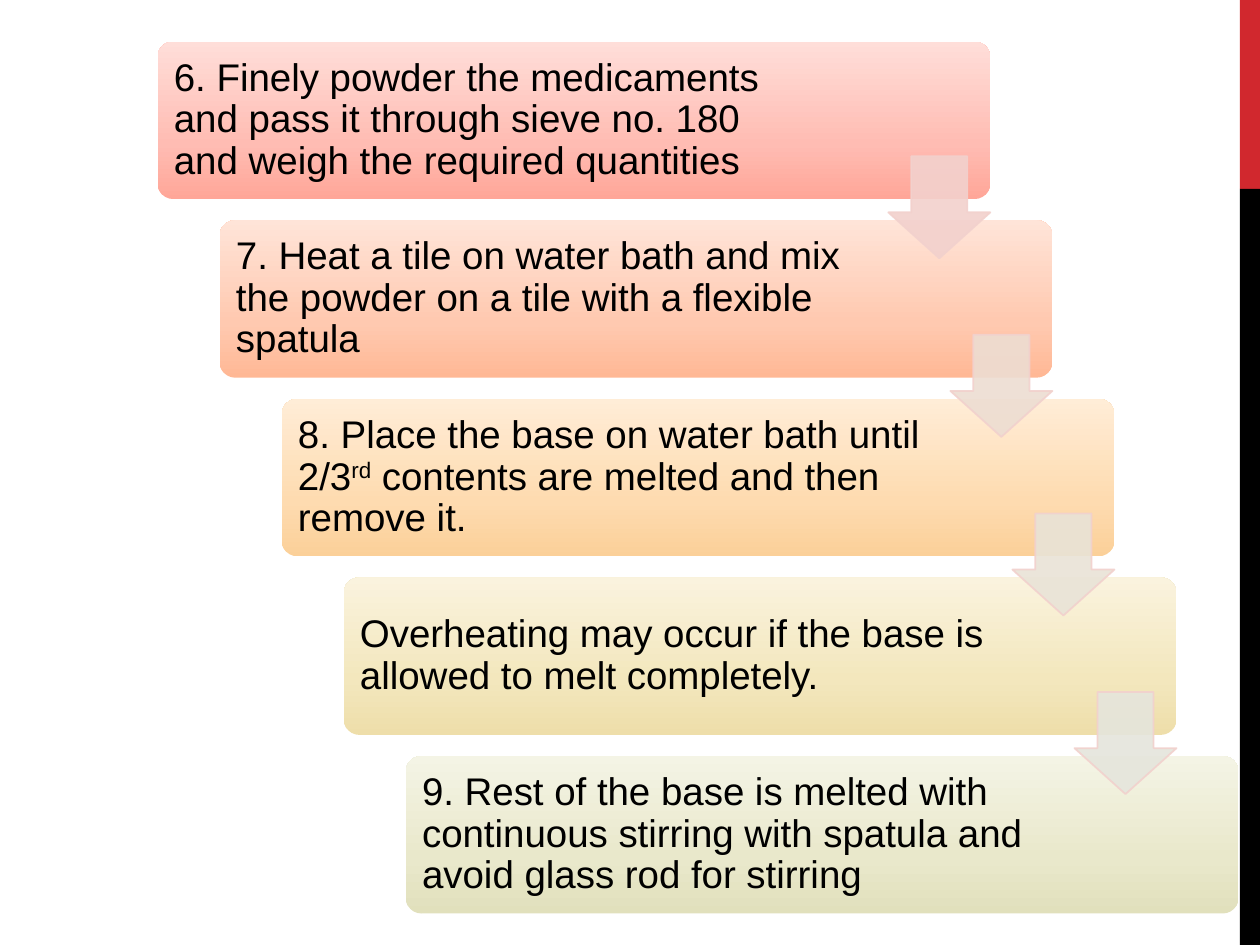
from copy import deepcopy

from lxml import etree
from pptx import Presentation
from pptx import util as u
from pptx.dml.color import RGBColor
from pptx.enum import shapes, text
from pptx.oxml.ns import qn

COLORS = {"red": "D1282E", "black": "000000", "arrow_line": "F2D1CD"}

STEPS = [
    (["6. Finely powder the medicaments and pass it through sieve no. 180 "
      "and weigh the required quantities"], ("FFA698", "FFBCB3", "FFDED9")),
    (["7. Heat a tile on water bath and mix the powder on a tile with a "
      "flexible spatula"], ("FFB895", "FFC9B0", "FFE4D8")),
    (["8. Place the base on water bath until 2/3", "rd",
      " contents are melted and then remove it."], ("FBD099", "FEDBB0", "FFEDD7")),
    (["Overheating may occur if the base is allowed to melt completely."],
     ("EEDEAA", "F3E7BD", "FAF3DE")),
    (["9. Rest of the base is melted with continuous stirring with spatula "
      "and avoid glass rod for stirring"], ("E1E0BC", "E9E8CB", "F4F4E5")),
]
ARROW_FILLS = ["F2D1CD", "EDDDD2", "E9E3D7", "E5E5DC"]
SIDE_BARS = [(0, 1.5, "red"), (1.5, 6, "black")]

LEFT, TOP, CARD_W, CARD_H = 1.25, 0.33, 6.61, 1.25
DX = (3.22 - LEFT) / 4
DY = (6 - TOP) / 4
PAD, INSET, ARROW = 0.04, 0.09, 0.81
FIRST_TEXT_W, TEXT_W = 5.12, 5.23


def rgb(value):
    return RGBColor.from_string(value)


def add_shape(kind, *box):
    sp = s.shapes.add_shape(kind, *map(u.Inches, box))
    sp.shadow.inherit = False
    sp.line.fill.background()
    return sp


def set_gradient(sp, stops):
    sp.fill.gradient()
    sp.fill.gradient_angle = 90
    gs_list = sp._element.spPr.find(".//" + qn("a:gsLst"))
    gs_list.append(deepcopy(gs_list[0]))
    for stop, color, pos in zip(sp.fill.gradient_stops, stops, (0, 0.35, 1)):
        stop.color.rgb = rgb(color)
        stop.position = pos


def add_card(x, y, stops):
    sp = add_shape(shapes.MSO_SHAPE.ROUNDED_RECTANGLE, x, y, CARD_W, CARD_H)
    sp.adjustments[0] = 0.1
    set_gradient(sp, stops)


def add_text(x, y, w, runs):
    box = (x + PAD, y + PAD, w, CARD_H - 2 * PAD)
    tf = s.shapes.add_textbox(*map(u.Inches, box)).text_frame
    tf.word_wrap = True
    tf.vertical_anchor = text.MSO_ANCHOR.MIDDLE
    tf.margin_left = tf.margin_right = u.Inches(INSET)
    tf.margin_top = tf.margin_bottom = u.Inches(INSET)
    p = tf.paragraphs[0]
    p.line_spacing = 0.9
    for i, words in enumerate(runs):
        r = p.add_run()
        r.text = words
        r.font.size = u.Pt(22)
        r.font.name = "Arial"
        r.font.color.rgb = rgb(COLORS["black"])
        if i == 1:
            r.font._element.set("baseline", "30000")


def add_arrow(x, y, color):
    sp = add_shape(shapes.MSO_SHAPE.DOWN_ARROW, x, y, ARROW, ARROW)
    sp.adjustments[0], sp.adjustments[1] = 0.55, 0.45
    sp.fill.solid()
    sp.fill.fore_color.rgb = rgb(color)
    sp.line.color.rgb = rgb(COLORS["arrow_line"])
    sp.line.width = u.Pt(1)
    for clr in sp._element.spPr.iter(qn("a:srgbClr")):
        etree.SubElement(clr, qn("a:alpha")).set("val", "90000")


prs = Presentation()
prs.slide_width, prs.slide_height = u.Inches(10), u.Inches(7.5)
s = prs.slides.add_slide(prs.slide_layouts[6])

for y, h, name in SIDE_BARS:
    bar = add_shape(shapes.MSO_SHAPE.RECTANGLE, 9.84, y, 0.16, h)
    bar.fill.solid()
    bar.fill.fore_color.rgb = rgb(COLORS[name])

for i, (runs, stops) in enumerate(STEPS):
    x, y = LEFT + i * DX, TOP + i * DY
    add_card(x, y, stops)
    add_text(x, y, TEXT_W if i else FIRST_TEXT_W, runs)

for i, color in enumerate(ARROW_FILLS):
    add_arrow(LEFT + CARD_W - ARROW + i * DX, 1.24 + i * DY, color)

prs.save("out.pptx")
